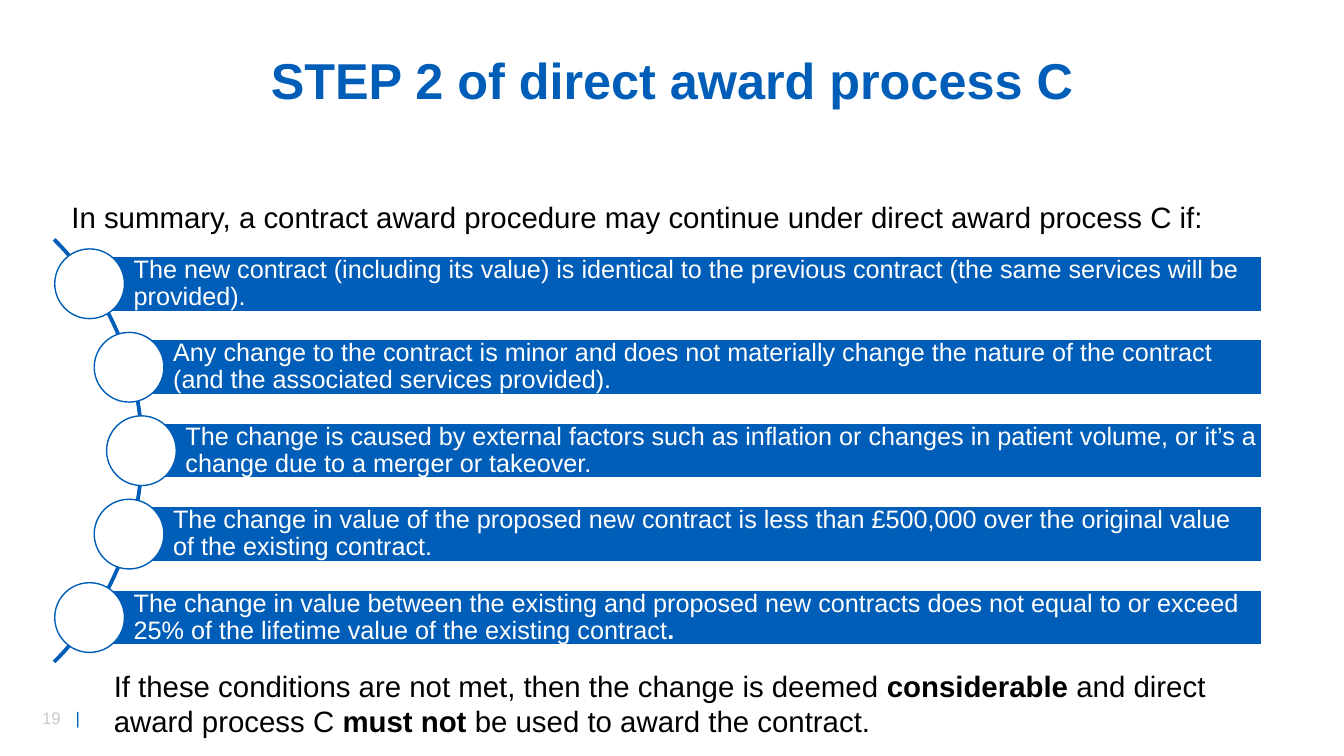
from dataclasses import dataclass

from pptx import Presentation
from pptx.dml.color import RGBColor
from pptx.enum import shapes, text
from pptx.oxml import parse_xml
from pptx.oxml.ns import nsdecls
from pptx.util import Pt

COLORS = {"blue": "005EB8", "white": "FFFFFF", "black": "000000", "grey": "C9C9C9"}
FONT = "Arial"

FIRST_CENTER, STEP = 202.7, 59.6
BAR_RIGHT, BAR_HEIGHT = 901.2, 39.3
CIRCLE = 49.8
ARC_X, ARC_SIZE = -325.4, 427.6
TAB_STOP = 24


@dataclass
class Run:
    text: str
    bold: bool = False
    color: str = "black"


@dataclass
class Box:
    left: float
    top: float
    width: float
    height: float


@dataclass
class Condition:
    left: float
    runs: list[Run]


CONDITIONS = [
    Condition(64, [Run("The new contract (including its value) is identical to the previous "
                       "contract (the same services will be provided).", color="white")]),
    Condition(92.2, [Run("Any change to the contract is minor and does not materially change the "
                         "nature of the contract (and the associated services provided).",
                         color="white")]),
    Condition(101, [Run("The change is caused by external factors such as inflation or changes in "
                        "patient volume, or it’s a change due to a merger or takeover.",
                        color="white")]),
    Condition(92.2, [Run("The change in value of the proposed new contract is less than £500,000 "
                         "over the original value of the existing contract.", color="white")]),
    Condition(64, [Run("The change in value between the existing and proposed new contracts does "
                       "not equal to or exceed 25% of the lifetime value of the existing contract",
                       color="white"),
                   Run(".", bold=True, color="white")]),
]


def rgb(name: str) -> RGBColor:
    return RGBColor.from_string(COLORS[name])


def write(sp, runs: list[Run], size: float, frame: dict | None = None,
          para: dict | None = None) -> None:
    """Fill a shape with one paragraph, after applying frame and paragraph formats."""
    tf = sp.text_frame
    p = tf.paragraphs[0]
    frame_format = {"word_wrap": True, **(frame or {})}
    para_format = {"alignment": text.PP_ALIGN.LEFT, **(para or {})}
    for target, values in ((tf, frame_format), (p, para_format)):
        for name, value in values.items():
            setattr(target, name, value)
    for run in runs:
        r = p.add_run()
        r.text = run.text
        for name, value in {"name": FONT, "size": Pt(size), "bold": run.bold}.items():
            setattr(r.font, name, value)
        r.font.color.rgb = rgb(run.color)


def add_text(s, box: Box, runs: list[Run], size: float, frame: dict | None = None,
             para: dict | None = None):
    sp = s.shapes.add_textbox(Pt(box.left), Pt(box.top), Pt(box.width), Pt(box.height))
    write(sp, runs, size, frame, para)
    return sp


def add_preset(s, kind, box: Box, fill: str, line: str):
    sp = s.shapes.add_shape(kind, Pt(box.left), Pt(box.top), Pt(box.width), Pt(box.height))
    sp.shadow.inherit = False
    sp.fill.solid()
    sp.fill.fore_color.rgb = rgb(fill)
    sp.line.color.rgb = rgb(line)
    sp.line.width = Pt(1)
    return sp


def add_arc(s) -> None:
    center = FIRST_CENTER + STEP * (len(CONDITIONS) - 1) / 2
    box = Box(ARC_X, center - ARC_SIZE / 2, ARC_SIZE, ARC_SIZE)
    arc = add_preset(s, shapes.MSO_SHAPE.BLOCK_ARC, box, "blue", "blue")
    for i, value in enumerate((189, 27, 0.004)):
        arc.adjustments[i] = value


def add_condition(s, condition: Condition, center: float) -> None:
    """Draw a bar with its text and the circle centred on its left end."""
    left = condition.left
    bar = add_preset(s, shapes.MSO_SHAPE.RECTANGLE,
                     Box(left, center - BAR_HEIGHT / 2, BAR_RIGHT - left, BAR_HEIGHT),
                     "blue", "white")
    frame = {"vertical_anchor": text.MSO_ANCHOR.MIDDLE, "margin_left": Pt(31.5),
             "margin_top": Pt(3.6), "margin_right": Pt(3.6), "margin_bottom": Pt(3.6)}
    write(bar, condition.runs, 18, frame, {"line_spacing": 0.9})
    add_preset(s, shapes.MSO_SHAPE.OVAL,
               Box(left - CIRCLE / 2, center - CIRCLE / 2, CIRCLE, CIRCLE), "white", "blue")


def add_page_number(s) -> None:
    sp = add_text(s, Box(23, 501.8, 51.1, 21.6),
                  [Run("19\t", color="grey"), Run("|", color="blue")], 12)
    pPr = sp.text_frame.paragraphs[0]._p.get_or_add_pPr()
    pPr.append(parse_xml(f'<a:tabLst {nsdecls("a")}>'
                         f'<a:tab pos="{Pt(TAB_STOP)}" algn="l"/></a:tabLst>'))


def main() -> None:
    prs = Presentation()
    prs.slide_width, prs.slide_height = Pt(960), Pt(540)
    s = prs.slides.add_slide(prs.slide_layouts[6])

    add_page_number(s)
    add_text(s, Box(177.8, 29.5, 604.8, 60.5),
             [Run("STEP 2 of direct award process C", bold=True, color="blue")], 36,
             {"vertical_anchor": text.MSO_ANCHOR.MIDDLE},
             {"alignment": text.PP_ALIGN.CENTER, "line_spacing": 0.9})
    add_text(s, Box(43.9, 139, 871.9, 32.4),
             [Run("In summary, a contract award procedure may continue under "
                  "direct award process C if:")], 21)
    add_arc(s)
    for i, condition in enumerate(CONDITIONS):
        add_condition(s, condition, FIRST_CENTER + i * STEP)
    add_text(s, Box(74.2, 473.8, 823, 58.3),
             [Run("If these conditions are not met, then the change is deemed "),
              Run("considerable ", bold=True),
              Run("and direct award process C "),
              Run("must not", bold=True),
              Run(" be used to award the contract.")], 21)

    prs.save("out.pptx")


if __name__ == "__main__":
    main()
